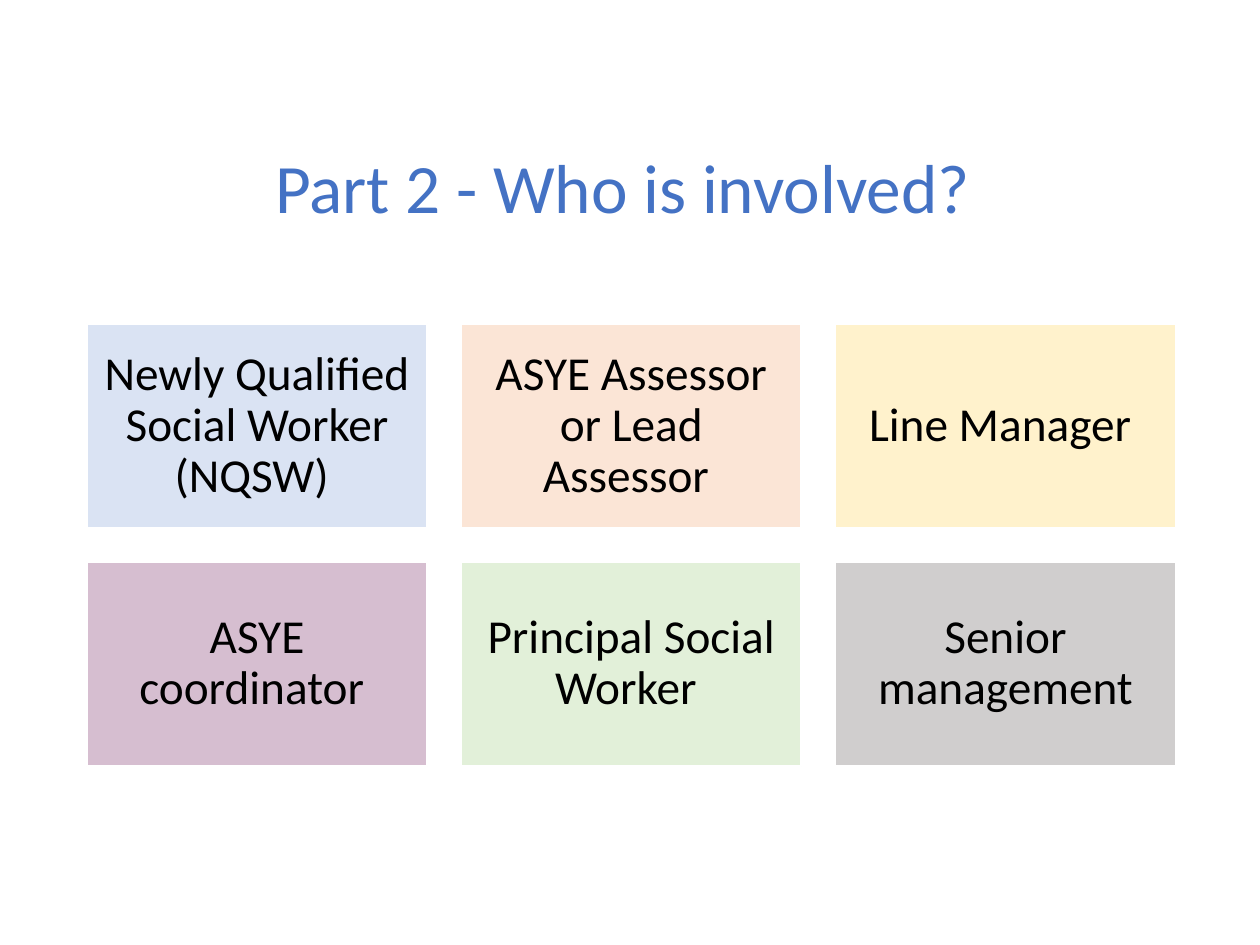
from pptx import Presentation
from pptx.dml.color import RGBColor
from pptx.enum.shapes import MSO_SHAPE
from pptx.enum.text import MSO_ANCHOR, MSO_AUTO_SIZE, PP_ALIGN
from pptx.util import Inches, Pt

RECTANGLE = MSO_SHAPE.RECTANGLE
MIDDLE = MSO_ANCHOR.MIDDLE
NO_AUTOFIT = MSO_AUTO_SIZE.NONE
CENTER = PP_ALIGN.CENTER

BLACK = RGBColor(0x00, 0x00, 0x00)
WHITE = RGBColor(0xFF, 0xFF, 0xFF)
BLUE = RGBColor(0x44, 0x72, 0xC4)
PALE_BLUE = RGBColor(0xDA, 0xE3, 0xF3)
PALE_ORANGE = RGBColor(0xFB, 0xE5, 0xD6)
PALE_YELLOW = RGBColor(0xFF, 0xF2, 0xCC)
MAUVE = RGBColor(0xD6, 0xBE, 0xD0)
PALE_GREEN = RGBColor(0xE2, 0xF0, 0xD9)
GREY = RGBColor(0xD0, 0xCE, 0xCE)

TITLE_ONLY = 5
COLUMNS = 3
GRID_LEFT, GRID_TOP = 0.69, 2.57
CARD_WIDTH, CARD_HEIGHT = 2.7, 1.62
GAP = 0.27

ROLES = [
    ("Newly Qualified Social Worker (NQSW) ", PALE_BLUE),
    ("ASYE Assessor or Lead Assessor ", PALE_ORANGE),
    ("Line Manager ", PALE_YELLOW),
    ("ASYE coordinator ", MAUVE),
    ("Principal Social Worker ", PALE_GREEN),
    ("Senior management", GREY),
]


class SlideBuilder:
    """Holds the text style and the slide being filled."""

    font_name = "Calibri"
    line_spacing = 0.9

    def __init__(self, slide):
        self.slide = slide

    def set_text(self, frame, text, size, color):
        frame.text = text
        frame.word_wrap = True
        frame.auto_size = NO_AUTOFIT
        frame.vertical_anchor = MIDDLE
        paragraph = frame.paragraphs[0]
        paragraph.alignment = CENTER
        paragraph.line_spacing = self.line_spacing
        font = paragraph.runs[0].font
        font.name = self.font_name
        font.size = Pt(size)
        font.color.rgb = color

    def title(self, text, left, top, width, height):
        heading = self.slide.shapes.title
        heading.left, heading.top = Inches(left), Inches(top)
        heading.width, heading.height = Inches(width), Inches(height)
        self.set_text(heading.text_frame, text, 39.6, BLUE)

    def card(self, text, fill, left, top):
        card = self.slide.shapes.add_shape(
            RECTANGLE, Inches(left), Inches(top),
            Inches(CARD_WIDTH), Inches(CARD_HEIGHT))
        card.shadow.inherit = False
        card.fill.solid()
        card.fill.fore_color.rgb = fill
        card.line.color.rgb = WHITE
        card.line.width = Pt(1)
        frame = card.text_frame
        frame.margin_left = frame.margin_right = Inches(0.11)
        frame.margin_top = frame.margin_bottom = Inches(0.11)
        self.set_text(frame, text, 27, BLACK)


def main():
    deck = Presentation()
    deck.slide_width, deck.slide_height = Inches(10), Inches(7.5)
    builder = SlideBuilder(
        deck.slides.add_slide(deck.slide_layouts[TITLE_ONLY]))

    builder.title("Part 2 - Who is involved? ", GRID_LEFT, 1.12, 8.63, 0.79)
    for index, (role, fill) in enumerate(ROLES):
        row, column = divmod(index, COLUMNS)
        builder.card(role, fill,
                     GRID_LEFT + column * (CARD_WIDTH + GAP),
                     GRID_TOP + row * (CARD_HEIGHT + GAP))

    deck.save("out.pptx")


if __name__ == "__main__":
    main()
